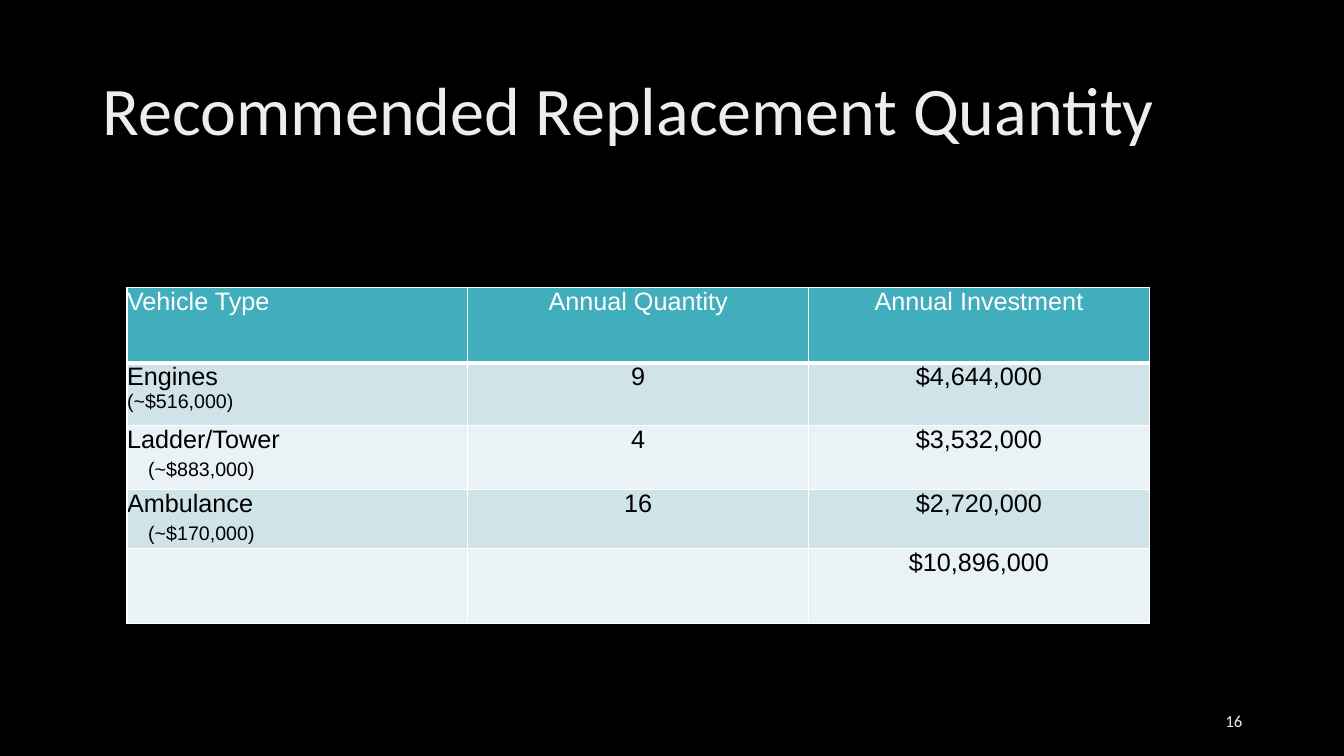
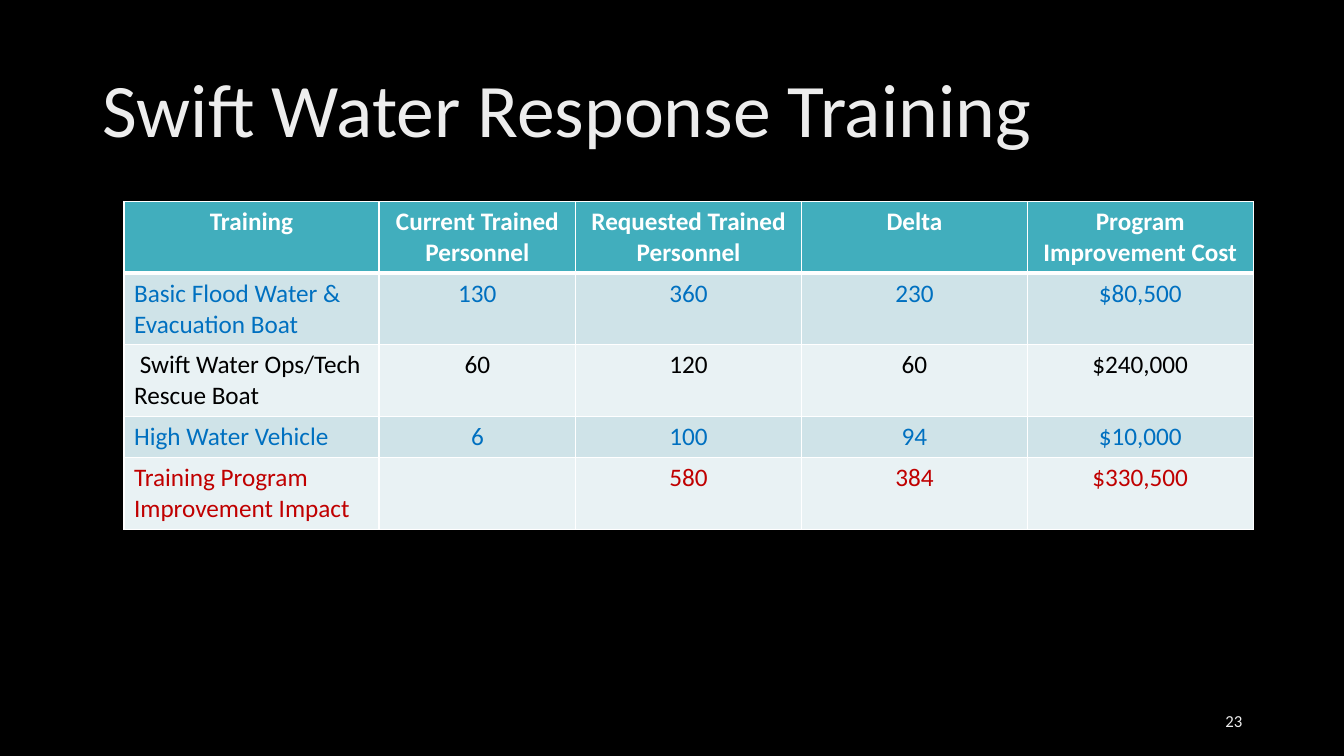
"""Build two slides, each with a title, a banded table and a page number."""
from dataclasses import dataclass

from lxml import etree
from pptx import Presentation
from pptx.dml.color import RGBColor
from pptx.enum.text import MSO_ANCHOR, MSO_AUTO_SIZE, PP_ALIGN
from pptx.oxml.ns import qn
from pptx.util import Inches, Pt

LEFT, MID, RIGHT = PP_ALIGN.LEFT, PP_ALIGN.CENTER, PP_ALIGN.RIGHT
CENTER = MSO_ANCHOR.MIDDLE
FIXED = MSO_AUTO_SIZE.NONE
TITLE_ONLY = 5
BODY = "Calibri"
HUES = {
    "back": "000000", "pale": "EDEDED", "white": "FFFFFF", "head": "41AEBD",
    "odd": "CFE3E8", "even": "E9F2F4", "black": "000000", "blue": "0070C0",
    "red": "C00000",
}


@dataclass
class Row:
    cells: list[str]
    high: float
    hue: str = "black"
    note: str = ""
    dent: float = 0
    gap: float = 0


@dataclass
class Page:
    title: str
    size: float
    num: int
    left: float
    top: float
    cols: list[float]
    rows: list[Row]
    font: str = BODY
    pad: tuple[float, float] = (0.1, 0.05)
    bold: bool = False
    lead: PP_ALIGN = MID


PAGES = [
    Page("Recommended Replacement Quantity", 48.6, 16, 1.26, 2.85, [3.38] * 3, [
        Row(["Vehicle Type", "Annual Quantity", "Annual Investment"], 0.75, "white"),
        Row(["Engines", "9", "$4,644,000"], 0.62, note="(~$516,000)"),
        Row(["Ladder/Tower", "4", "$3,532,000"], 0.64,
            note="(~$883,000)", dent=0.21, gap=3.5),
        Row(["Ambulance", "16", "$2,720,000"], 0.58,
            note="(~$170,000)", dent=0.21, gap=3.5),
        Row(["", "", "$10,896,000"], 0.75),
    ], font="Arial", pad=(0, 0), lead=LEFT),
    Page("Swift Water Response Training", 54, 23, 1.23, 2,
         [2.53, 1.95, 2.24, 2.24, 2.24], [
        Row(["Training", "Current Trained Personnel", "Requested Trained Personnel",
             "Delta", "Program Improvement Cost"], 0.71, "white"),
        Row(["Basic Flood Water & Evacuation Boat", "130", "360", "230", "$80,500"],
            0.71, "blue"),
        Row([" Swift Water Ops/Tech Rescue Boat", "60", "120", "60", "$240,000"], 0.71),
        Row(["High Water Vehicle", "6", "100", "94", "$10,000"], 0.41, "blue"),
        Row(["Training Program Improvement Impact", "", "580", "384", "$330,500"],
            0.71, "red"),
    ], bold=True),
]


def color(name: str) -> RGBColor:
    return RGBColor.from_string(HUES[name])


def write(para, text: str, *, size: float = 18, font: str = BODY, hue: str = "pale",
          bold: bool = False, align=LEFT, dent: float = 0, gap: float = 0,
          line: float = 1) -> None:
    if dent:
        props = para._p.get_or_add_pPr()
        props.set("marL", str(Inches(dent)))
        props.set("indent", "0")
    para.alignment = align
    para.line_spacing = line
    if gap:
        para.space_before = Pt(gap)
    if text:
        para.add_run().text = text
    para.font.size = Pt(size)
    for run in para.runs:
        run.font.size = Pt(size)
        run.font.name = font
        run.font.bold = bold
        run.font.color.rgb = color(hue)


def place(shape, left: float, top: float, wide: float, high: float):
    shape.left, shape.top = Inches(left), Inches(top)
    shape.width, shape.height = Inches(wide), Inches(high)
    frame = shape.text_frame
    frame.word_wrap = True
    frame.auto_size = FIXED
    frame.vertical_anchor = CENTER
    return frame.paragraphs[0]


def edge(cell, row: int) -> None:
    props = cell._tc.get_or_add_tcPr()
    thick = {"lnT": 3 if row == 1 else 1, "lnB": 3 if row == 0 else 1}
    for side in ("lnL", "lnR", "lnT", "lnB"):
        line = etree.SubElement(props, qn(f"a:{side}"), w=str(Pt(thick.get(side, 1))))
        fill = etree.SubElement(line, qn("a:solidFill"))
        etree.SubElement(fill, qn("a:srgbClr"), val=HUES["white"])


def grid(slide, page: Page) -> None:
    table = slide.shapes.add_table(
        len(page.rows), len(page.cols), Inches(page.left), Inches(page.top),
        Inches(sum(page.cols)), Inches(sum(row.high for row in page.rows))).table
    for col, wide in zip(table.columns, page.cols):
        col.width = Inches(wide)
    for i, row in enumerate(page.rows):
        table.rows[i].height = Inches(row.high)
        band = "head" if i == 0 else ("even", "odd")[i % 2]
        for j, text in enumerate(row.cells):
            cell = table.cell(i, j)
            cell.margin_left = cell.margin_right = Inches(page.pad[0])
            cell.margin_top = cell.margin_bottom = Inches(page.pad[1])
            edge(cell, i)
            cell.fill.solid()
            cell.fill.fore_color.rgb = color(band)
            first = page.lead if i == 0 else LEFT
            frame = cell.text_frame
            write(frame.paragraphs[0], text, font=page.font, hue=row.hue,
                  bold=page.bold and i == 0, align=MID if j else first)
            if row.note and j == 0:
                write(frame.add_paragraph(), row.note, size=14, font=page.font,
                      hue=row.hue, dent=row.dent, gap=row.gap)


def build(deck, page: Page) -> None:
    slide = deck.slides.add_slide(deck.slide_layouts[TITLE_ONLY])
    write(place(slide.shapes.title, 0.92, 0.4, 11.5, 1.45), page.title,
          size=page.size, line=0.9)
    grid(slide, page)
    box = slide.shapes.add_textbox(0, 0, 0, 0)
    write(place(box, 9.42, 6.95, 3, 0.4), str(page.num), size=12, align=RIGHT)


def main() -> None:
    deck = Presentation()
    deck.slide_width, deck.slide_height = Inches(13.33), Inches(7.5)
    back = deck.slide_master.background.fill
    back.solid()
    back.fore_color.rgb = color("back")
    for page in PAGES:
        build(deck, page)
    deck.save("out.pptx")


if __name__ == "__main__":
    main()
